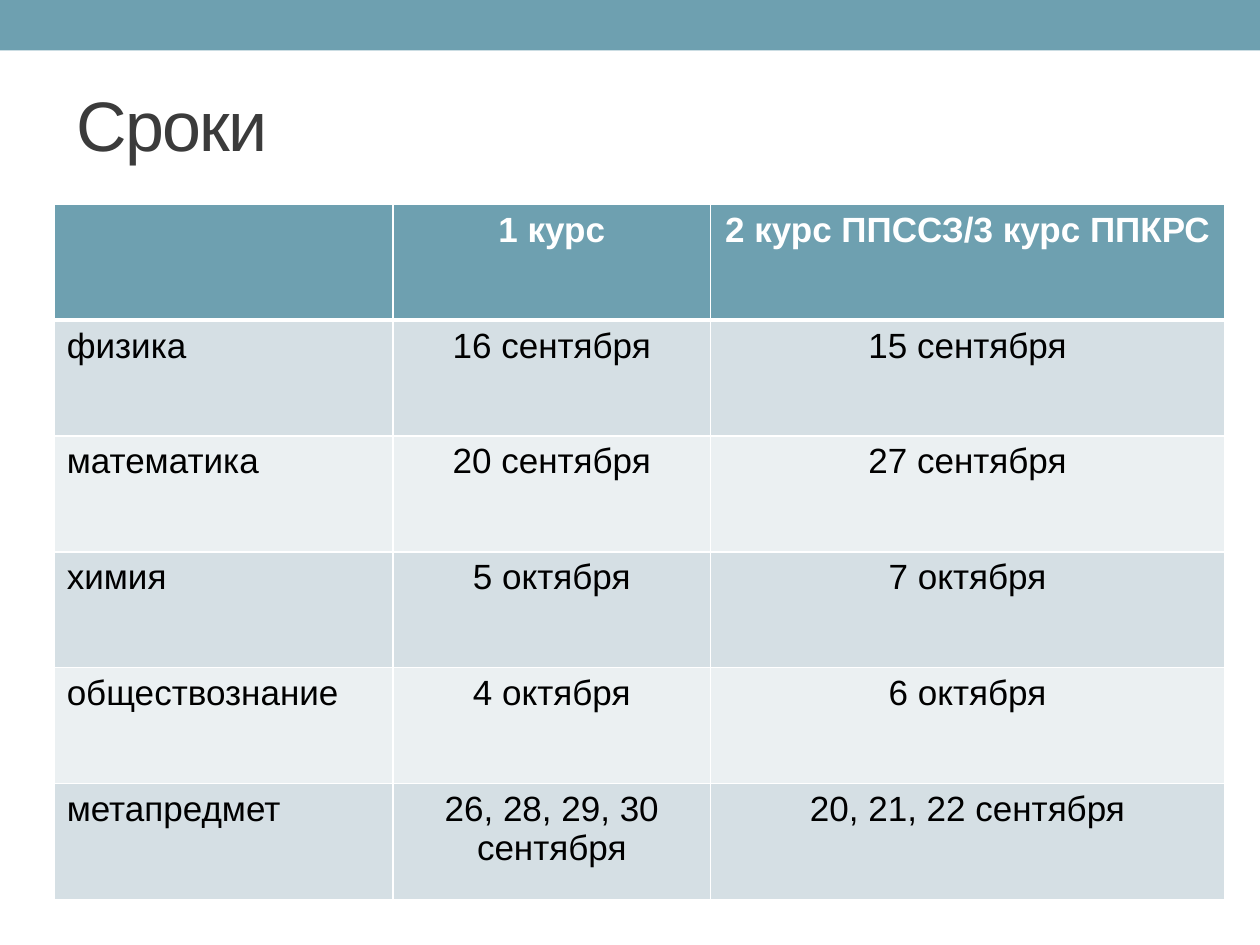
"""Build the slide with the schedule of dates by subject and course."""
from lxml import etree
from pptx import Presentation
from pptx.dml.color import RGBColor
from pptx.enum.shapes import MSO_SHAPE
from pptx.enum.text import MSO_ANCHOR, PP_ALIGN
from pptx.oxml.ns import qn
from pptx.util import Inches, Pt

RECTANGLE = MSO_SHAPE.RECTANGLE
MIDDLE = MSO_ANCHOR.MIDDLE
LEFT, CENTER = PP_ALIGN.LEFT, PP_ALIGN.CENTER

FONT = "Arial"
COLORS = {
    "accent": "6EA0B0",
    "title": "3B3B3B",
    "text": "000000",
    "white": "FFFFFF",
    "odd": "D5DFE4",
    "even": "EBF0F2",
}
TITLE = "Сроки"
ROWS = [
    ("", "1 курс", "2 курс ППССЗ/3 курс ППКРС"),
    ("физика", "16 сентября", "15 сентября"),
    ("математика", "20 сентября", "27 сентября"),
    ("химия", "5 октября", "7 октября"),
    ("обществознание", "4 октября", "6 октября"),
    ("метапредмет", "26, 28, 29, 30 сентября", "20, 21, 22 сентября"),
]
COLUMN_WIDTHS = (2.69, 2.52, 4.08)
ROW_HEIGHT = 0.92


def rgb(name):
    return RGBColor.from_string(COLORS[name])


def write_text(frame, text, size=20, color="text", bold=False, align=LEFT, spacing=None):
    paragraph = frame.paragraphs[0]
    paragraph.alignment = align
    run = paragraph.add_run()
    run.text = text
    run.font.name = FONT
    run.font.size = Pt(size)
    run.font.bold = bold
    run.font.color.rgb = rgb(color)
    if spacing is not None:
        run.font._element.set("spc", str(int(spacing * 100)))


def set_borders(cell, **widths):
    properties = cell._tc.get_or_add_tcPr()
    for side in "LRTB":
        line = etree.SubElement(properties, qn(f"a:ln{side}"), w=str(Pt(widths.get(side, 1))))
        fill = etree.SubElement(line, qn("a:solidFill"))
        etree.SubElement(fill, qn("a:srgbClr"), val=COLORS["white"])


def add_band(slide, width):
    band = slide.shapes.add_shape(RECTANGLE, 0, 0, width, Inches(0.4))
    band.shadow.inherit = False
    band.fill.solid()
    band.fill.fore_color.rgb = rgb("accent")
    band.line.fill.background()


def add_title(slide):
    box = slide.shapes.add_textbox(Inches(0.51), Inches(0.44), Inches(9), Inches(1.08))
    box.text_frame.word_wrap = True
    box.text_frame.vertical_anchor = MIDDLE
    write_text(box.text_frame, TITLE, size=40, color="title", spacing=-1)


def add_schedule(slide):
    table = slide.shapes.add_table(
        len(ROWS), len(COLUMN_WIDTHS), Inches(0.43), Inches(1.62),
        Inches(sum(COLUMN_WIDTHS)), Inches(ROW_HEIGHT * len(ROWS)),
    ).table
    for column, width in zip(table.columns, COLUMN_WIDTHS):
        column.width = Inches(width)
    for row_index, values in enumerate(ROWS):
        table.rows[row_index].height = Inches(ROW_HEIGHT)
        header = row_index == 0
        fill = "accent" if header else ("even", "odd")[row_index % 2]
        for column_index, value in enumerate(values):
            cell = table.cell(row_index, column_index)
            set_borders(cell, B=3 if header else 1, T=3 if row_index == 1 else 1)
            cell.fill.solid()
            cell.fill.fore_color.rgb = rgb(fill)
            if value:
                write_text(
                    cell.text_frame, value, bold=header,
                    color="white" if header else "text",
                    align=CENTER if column_index else LEFT,
                )


def main():
    presentation = Presentation()
    presentation.slide_width = Inches(10)
    presentation.slide_height = Inches(7.5)
    slide = presentation.slides.add_slide(presentation.slide_layouts[6])
    add_band(slide, presentation.slide_width)
    add_title(slide)
    add_schedule(slide)
    presentation.save("out.pptx")


if __name__ == "__main__":
    main()
